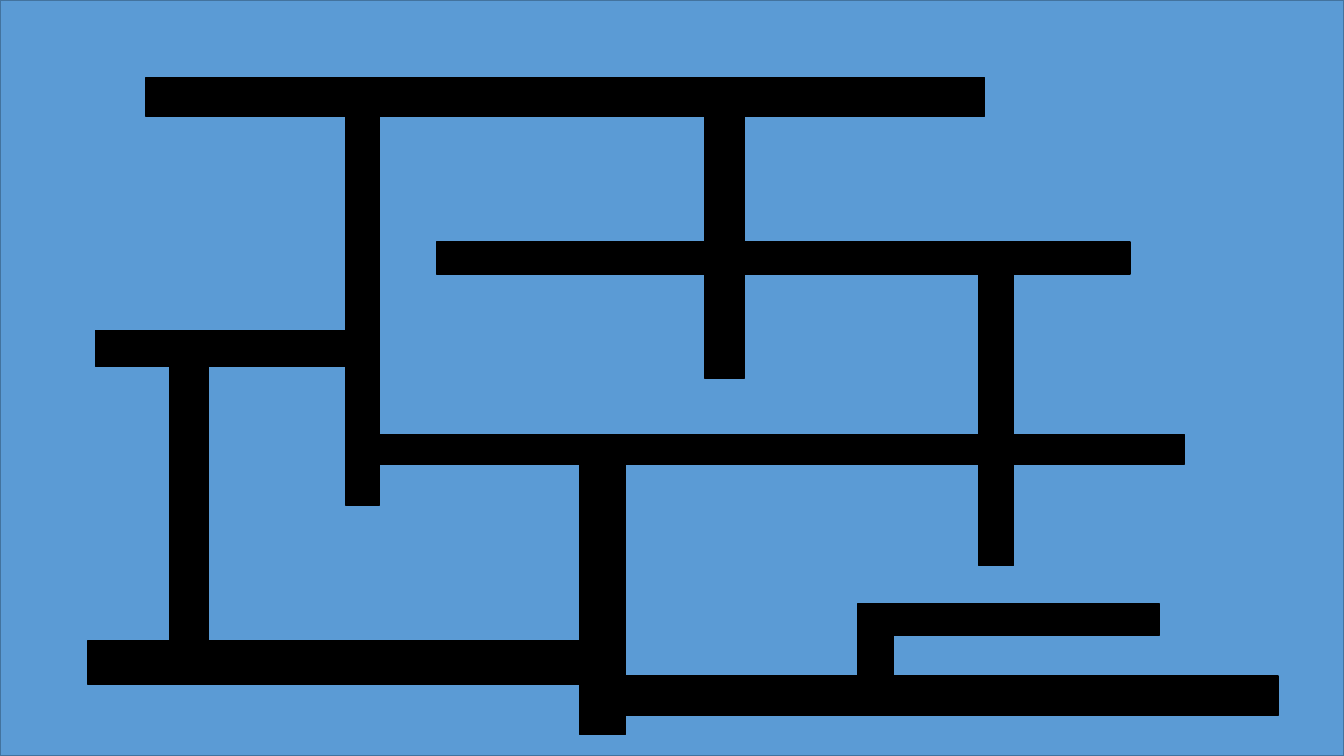
from pptx import Presentation
from pptx.dml.color import RGBColor
from pptx.enum.shapes import MSO_SHAPE
from pptx.util import Cm, Pt

SKY_BLUE = RGBColor(0x5B, 0x9B, 0xD5)
EDGE_BLUE = RGBColor(0x43, 0x73, 0x9E)
BLACK = RGBColor(0, 0, 0)

SLIDE_WIDTH, SLIDE_HEIGHT = 33.87, 19.05

# Walls of the maze in cm: left, top, width, height
WALLS = [
    (3.68, 1.96, 21.13, 0.97),
    (8.71, 2.44, 0.86, 10.29),
    (11.0, 6.1, 17.48, 0.81),
    (17.75, 2.67, 1.02, 6.86),
    (9.58, 10.95, 20.27, 0.74),
    (24.66, 6.5, 0.89, 7.75),
    (14.6, 11.3, 1.17, 7.21),
    (2.21, 16.15, 13.08, 1.09),
    (15.01, 17.04, 17.2, 0.99),
    (2.41, 8.33, 7.04, 0.91),
    (4.29, 9.17, 0.97, 7.21),
    (21.62, 15.21, 0.89, 2.34),
    (22.43, 15.21, 6.78, 0.81),
]


def add_block(slide, box, fill, edge):
    left, top, width, height = box
    block = slide.shapes.add_shape(
        MSO_SHAPE.RECTANGLE, Cm(left), Cm(top), Cm(width), Cm(height))
    block.shadow.inherit = False
    block.fill.solid()
    block.fill.fore_color.rgb = fill
    block.line.color.rgb = edge
    block.line.width = Pt(1)


def add_maze(slide, box):
    maze_left, maze_top = box[:2]

    # Floor
    add_block(slide, box, SKY_BLUE, EDGE_BLUE)

    # Walls
    for left, top, width, height in WALLS:
        wall = (maze_left + left, maze_top + top, width, height)
        add_block(slide, wall, BLACK, BLACK)


def main():
    deck = Presentation()
    deck.slide_width = Cm(SLIDE_WIDTH)
    deck.slide_height = Cm(SLIDE_HEIGHT)
    maze_slide = deck.slides.add_slide(deck.slide_layouts[6])
    add_maze(maze_slide, (0, 0, SLIDE_WIDTH, SLIDE_HEIGHT))
    deck.save("out.pptx")


if __name__ == "__main__":
    main()
